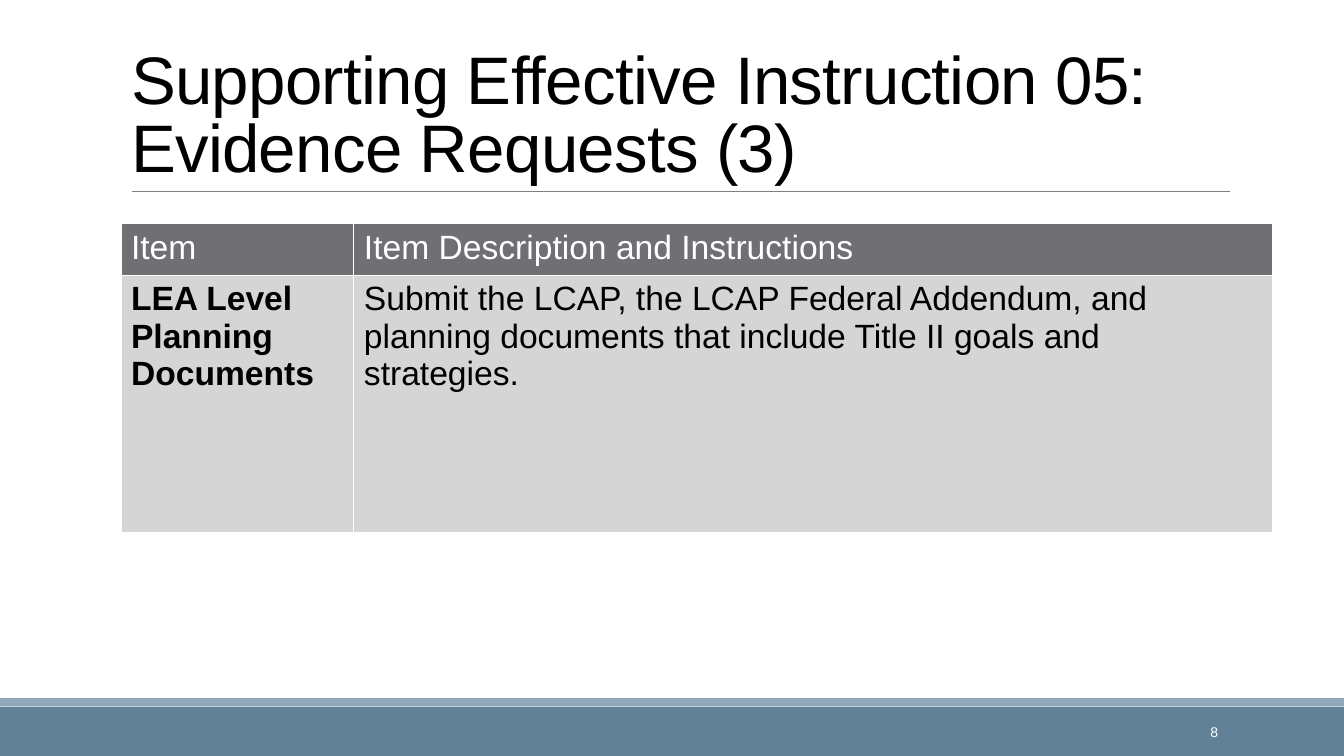
from lxml import etree
from pptx import Presentation
from pptx.dml.color import RGBColor
from pptx.enum.shapes import MSO_CONNECTOR, MSO_SHAPE
from pptx.enum.text import MSO_ANCHOR, MSO_AUTO_SIZE, PP_ALIGN
from pptx.oxml import parse_xml
from pptx.oxml.ns import nsdecls, qn
from pptx.util import Inches, Pt

RECT = MSO_SHAPE.RECTANGLE
STRAIGHT = MSO_CONNECTOR.STRAIGHT
MIDDLE, BOTTOM = MSO_ANCHOR.MIDDLE, MSO_ANCHOR.BOTTOM
LEFT, RIGHT = PP_ALIGN.LEFT, PP_ALIGN.RIGHT
NO_FIT = MSO_AUTO_SIZE.NONE
WHITE, BLACK = "FFFFFF", "000000"
COLS = [2.31, 9.11]
ROWS = [0.51, 2.55]
CELLS = [
    ["Item", "Item Description and Instructions"],
    ["LEA Level Planning Documents",
     "Submit the LCAP, the LCAP Federal Addendum, and planning documents "
     "that include Title II goals and strategies."],
]


def paint(target, color):
    """Give a fill a solid colour from a hex string."""
    target.solid()
    target.fore_color.rgb = RGBColor.from_string(color)


def write(frame, text, size, color, bold=False, align=LEFT):
    """Write one run in the first paragraph and return the run."""
    para = frame.paragraphs[0]
    para.alignment = align
    run = para.add_run()
    run.text = text
    run.font.name = "Arial"
    run.font.size = Pt(size)
    run.font.bold = bold
    paint(run.font.fill, color)
    return run


def add_band(slide, x, y, w, h, color, edge=None):
    """Draw a plain band with an optional edge colour."""
    band = slide.shapes.add_shape(RECT, Inches(x), Inches(y), Inches(w), Inches(h))
    band.shadow.inherit = False
    paint(band.fill, color)
    if edge:
        paint(band.line.fill, edge)
        band.line.width = Pt(1.25)
    else:
        band.line.fill.background()


def add_title(slide, x, y, w, h):
    """Place the title with the rule at the foot of its box."""
    title = slide.shapes.title
    title.left, title.top = Inches(x), Inches(y)
    title.width, title.height = Inches(w), Inches(h)
    frame = title.text_frame
    frame.word_wrap = True
    frame.auto_size = NO_FIT
    frame.vertical_anchor = BOTTOM
    run = write(frame, "Supporting Effective Instruction 05: Evidence Requests (3)",
                48, BLACK)
    run.font._element.set("spc", "-50")
    frame.paragraphs[0].line_spacing = 0.85
    foot = Inches(y + h)
    rule = slide.shapes.add_connector(
        STRAIGHT, Inches(x + 0.11), foot, Inches(x + w), foot)
    paint(rule.line.fill, "808080")
    rule.line.width = Pt(0.5)
    etree.SubElement(rule._element.spPr, qn("a:effectLst"))


def add_edges(cell):
    """Draw thin white borders around a cell."""
    props = cell._tc.get_or_add_tcPr()
    for i, side in enumerate(("lnL", "lnR", "lnT", "lnB")):
        props.insert(i, parse_xml(
            f'<a:{side} {nsdecls("a")} w="{Pt(1)}"><a:solidFill>'
            f'<a:srgbClr val="{WHITE}"/></a:solidFill></a:{side}>'))


def add_grid(slide, x, y, w, h):
    """Place the table of evidence items."""
    grid = slide.shapes.add_table(len(ROWS), len(COLS), Inches(x), Inches(y),
                                  Inches(w), Inches(h)).table
    for col, width in zip(grid.columns, COLS):
        col.width = Inches(width)
    for r, height in enumerate(ROWS):
        grid.rows[r].height = Inches(height)
        for c, text in enumerate(CELLS[r]):
            cell = grid.cell(r, c)
            head = r == 0
            paint(cell.fill, "6F6F74" if head else "D5D5D6")
            add_edges(cell)
            write(cell.text_frame, text, 24, WHITE if head else BLACK,
                  bold=not head and c == 0)


def add_foot(slide, x, y, w, h):
    """Place the footer bands and the slide number."""
    add_band(slide, x, y + 0.08, w, h - 0.08, "618197")
    add_band(slide, x, y, w, 0.07, "92A9B9", "8FA3B6")
    box = slide.shapes.add_textbox(Inches(x + 10.74), Inches(y + 0.13),
                                   Inches(1.44), Inches(0.4))
    frame = box.text_frame
    frame.word_wrap = True
    frame.vertical_anchor = MIDDLE
    write(frame, "8", 10, WHITE, align=RIGHT)


def main():
    """Build and save the slide."""
    deck = Presentation()
    deck.slide_width, deck.slide_height = Inches(13.33), Inches(7.5)
    slide = deck.slides.add_slide(deck.slide_layouts[5])
    paint(slide.background.fill, WHITE)
    add_foot(slide, 0, 6.93, 13.33, 0.57)
    add_title(slide, 1.2, 0.31, 11, 1.59)
    add_grid(slide, 1.2, 2.22, sum(COLS), sum(ROWS))
    deck.save("out.pptx")


if __name__ == "__main__":
    main()
